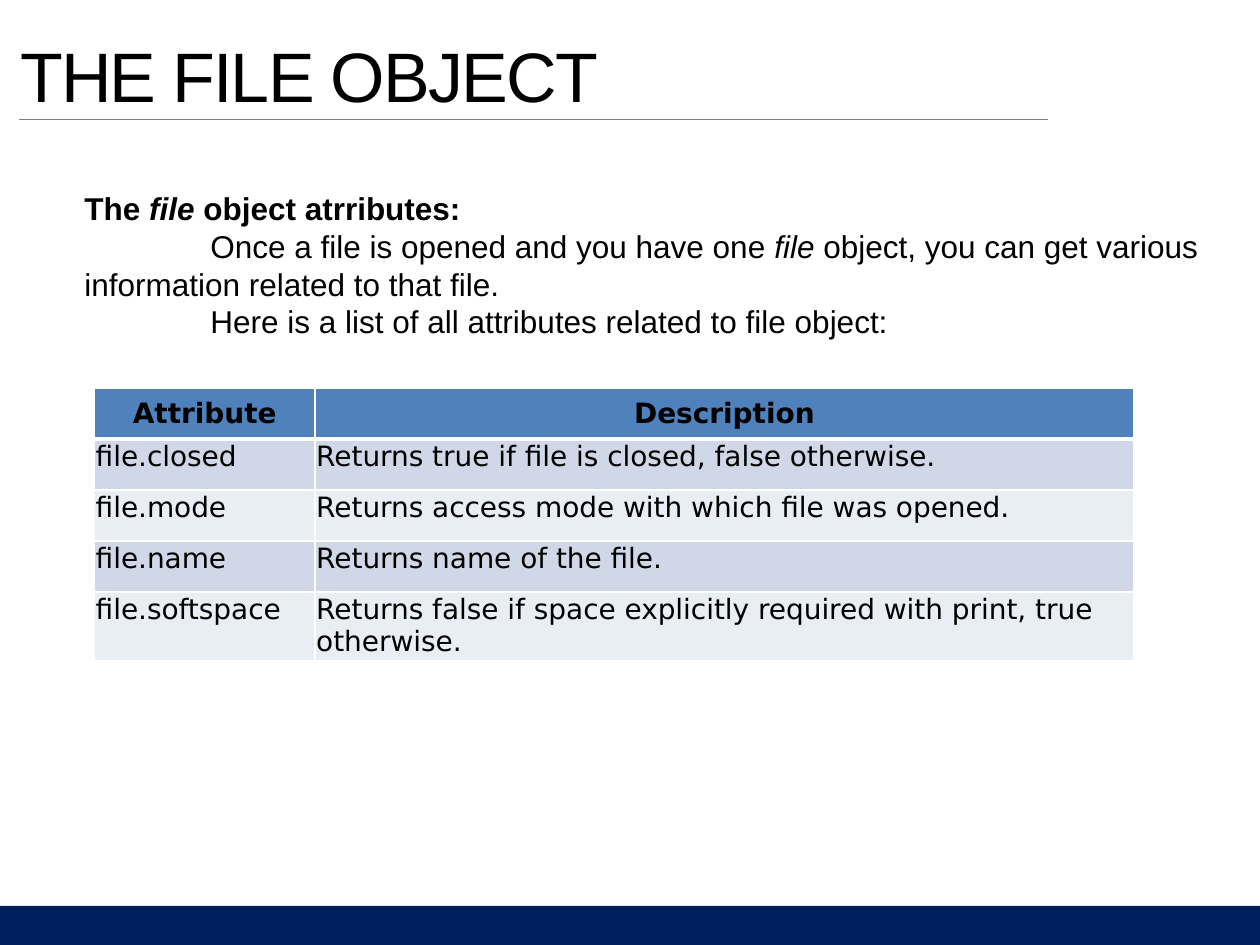
from typing import NamedTuple

from pptx import Presentation
from pptx import util as u
from pptx.dml.color import RGBColor
from pptx.enum import shapes, text
from pptx.oxml import parse_xml
from pptx.oxml.ns import nsdecls

NAVY, BLUE, GREY = "001F5F", "4F81BD", "7E7E7E"
BLACK, WHITE = "000000", "FFFFFF"
BANDS = ("D0D8E8", "E9EDF4")


class Attribute(NamedTuple):
    name: str
    description: str


class Run(NamedTuple):
    text: str
    italic: bool = False


HEADER = Attribute("Attribute", "Description")
ATTRIBUTES = (
    Attribute("file.closed", "Returns true if file is closed, false otherwise."),
    Attribute("file.mode", "Returns access mode with which file was opened."),
    Attribute("file.name", "Returns name of the file."),
    Attribute("file.softspace",
              "Returns false if space explicitly required with print, true otherwise."),
)


def color(value: str) -> RGBColor:
    return RGBColor.from_string(value)


def write(paragraph, *runs: Run, size: float, font: str = "Arial", bold: bool = False,
          align=text.PP_ALIGN.LEFT, indent: float = 0, line_height: float = 0,
          before: float = 0, tracking: float = 0) -> None:
    """Fill a paragraph; lengths are points except indent, which is inches."""
    paragraph.alignment = align
    paragraph.space_before = u.Pt(before)
    if line_height:
        paragraph.line_spacing = u.Pt(line_height)
    if indent:
        paragraph._p.get_or_add_pPr().set("indent", str(u.Inches(indent)))
    for part in runs:
        run = paragraph.add_run()
        run.text = part.text
        run.font.name = font
        run.font.size = u.Pt(size)
        run.font.bold = bold
        run.font.italic = part.italic
        run.font.color.rgb = color(BLACK)
        if tracking:
            run._r.get_or_add_rPr().set("spc", str(round(tracking * 100)))


def add_text_frame(slide, left: float, top: float, width: float, height: float):
    box = slide.shapes.add_textbox(*map(u.Inches, (left, top, width, height)))
    frame = box.text_frame
    frame.word_wrap = True
    frame.margin_left = frame.margin_right = frame.margin_top = frame.margin_bottom = 0
    return frame


def add_footer(slide) -> None:
    bar = slide.shapes.add_shape(shapes.MSO_SHAPE.RECTANGLE,
                                 *map(u.Inches, (0, 7.19, 10, 0.31)))
    bar.shadow.inherit = False
    bar.fill.solid()
    bar.fill.fore_color.rgb = color(NAVY)
    bar.line.fill.background()


def add_rule(slide) -> None:
    rule = slide.shapes.add_connector(shapes.MSO_CONNECTOR.STRAIGHT,
                                      *map(u.Inches, (0.15, 0.95, 8.32, 0.95)))
    rule.line.color.rgb = color(GREY)
    rule.line.width = u.Pt(0.48)
    rule._element.spPr.append(parse_xml(f"<a:effectLst {nsdecls('a')}/>"))


def set_borders(cell, bottom: float) -> None:
    """Draw white cell borders, with the bottom width in points."""
    properties = cell._tc.get_or_add_tcPr()
    widths = {"lnL": 1, "lnR": 1, "lnT": 1, "lnB": bottom}
    for position, (side, width) in enumerate(widths.items()):
        properties.insert(position, parse_xml(
            f'<a:{side} {nsdecls("a")} w="{u.Pt(width)}"><a:solidFill>'
            f'<a:srgbClr val="{WHITE}"/></a:solidFill></a:{side}>'))


def add_attribute_table(slide) -> None:
    rows = (HEADER, *ATTRIBUTES)
    table = slide.shapes.add_table(len(rows), len(HEADER),
                                   *map(u.Inches, (0.75, 3.08, 8.25, 2.17))).table
    for column, width in zip(table.columns, (1.75, 6.5)):
        column.width = u.Inches(width)
    for index, values in enumerate(rows):
        is_header = index == 0
        table.rows[index].height = u.Inches(0.54 if values is rows[-1] else 0.405)
        for cell, value in zip(table.rows[index].cells, values):
            cell.margin_left = cell.margin_right = cell.margin_top = u.Inches(0.01)
            cell.margin_bottom = 0
            cell.vertical_anchor = (text.MSO_ANCHOR.MIDDLE if is_header
                                    else text.MSO_ANCHOR.TOP)
            cell.fill.solid()
            cell.fill.fore_color.rgb = color(BLUE if is_header else BANDS[(index - 1) % 2])
            set_borders(cell, bottom=3 if is_header else 1)
            write(cell.text_frame.paragraphs[0], Run(value), size=16,
                  font="DejaVu Sans", bold=is_header,
                  align=text.PP_ALIGN.CENTER if is_header else text.PP_ALIGN.LEFT)


def add_introduction(slide) -> None:
    frame = add_text_frame(slide, 0.67, 1.5, 8.92, 5.75)
    style = {"size": 18, "line_height": 21.6}
    write(frame.paragraphs[0], Run("The "), Run("file", italic=True),
          Run(" object atrributes:"), bold=True, **style)
    write(frame.add_paragraph(), Run("Once a file is opened and you have one "),
          Run("file", italic=True),
          Run(" object, you can get various information related to that file."),
          indent=1, **style)
    write(frame.add_paragraph(),
          Run("Here is a list of all attributes related to file object:"),
          indent=1, **style)


def main() -> None:
    presentation = Presentation()
    presentation.slide_width = u.Inches(10)
    presentation.slide_height = u.Inches(7.5)
    slide = presentation.slides.add_slide(presentation.slide_layouts[6])
    add_footer(slide)
    add_introduction(slide)
    add_attribute_table(slide)
    add_rule(slide)
    title = add_text_frame(slide, 0.15, 0.25, 9.83, 0.69)
    title.margin_top = u.Inches(0.01)
    write(title.paragraphs[0], Run("THE FILE OBJECT"), size=40, indent=0.01,
          before=1, tracking=-1)
    presentation.save("out.pptx")


if __name__ == "__main__":
    main()
